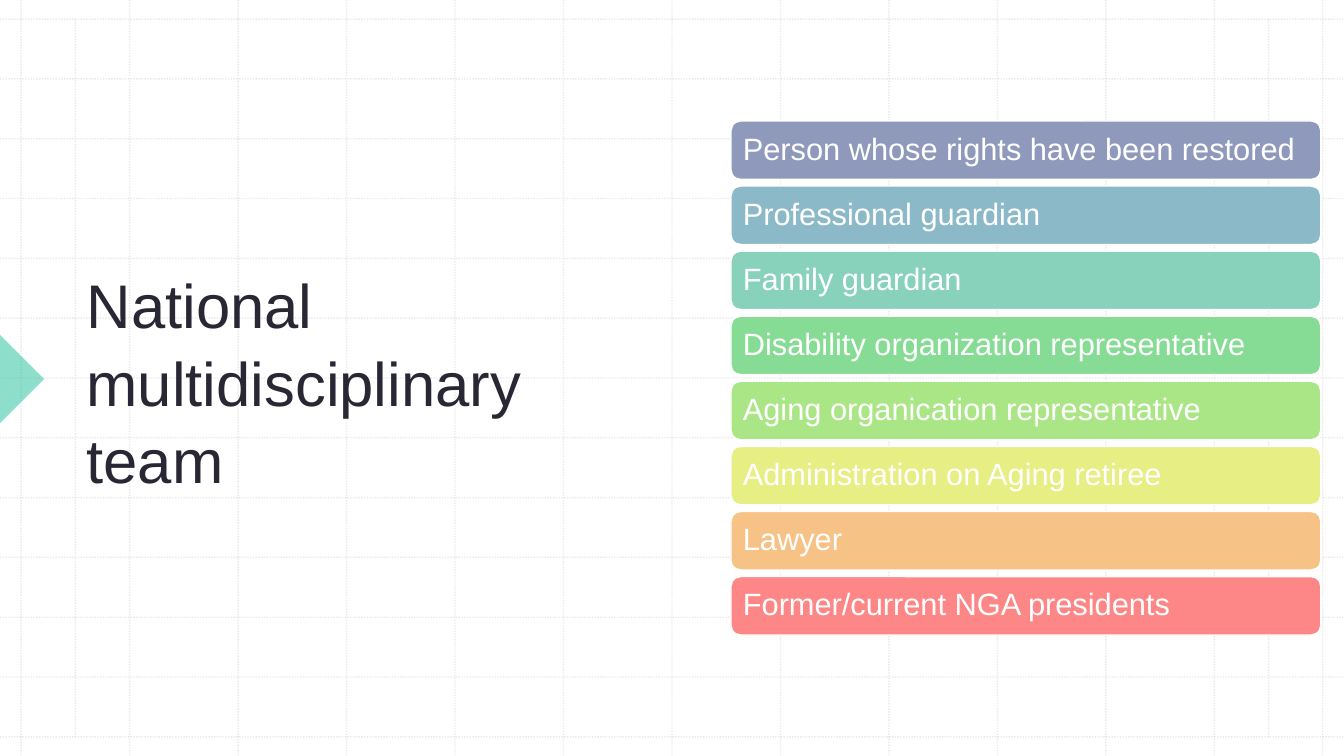
from pptx import Presentation
from pptx.dml.color import RGBColor
from pptx.enum.dml import MSO_LINE
from pptx.enum.shapes import MSO_CONNECTOR, MSO_SHAPE
from pptx.enum.text import MSO_ANCHOR, PP_ALIGN
from pptx.oxml.ns import qn
from pptx.util import Inches, Pt
from lxml.etree import SubElement

HUES = {"grid": "BCBCBC", "mark": "1EBE9B", "ink": "2A2735", "white": "FFFFFF"}
WIDE, HIGH = 13.33, 7.5

deck = Presentation()
deck.slide_width, deck.slide_height = Inches(WIDE), Inches(HIGH)
slide = deck.slides.add_slide(deck.slide_layouts[6])
shapes = slide.shapes


def fade(fill, share):
    """Set the opacity of a solid fill element, in percent."""
    color = fill.find(".//" + qn("a:srgbClr"))
    SubElement(color, qn("a:alpha")).set("val", str(share * 1000))


def write(shape, text, size, hue, space):
    """Put one left-aligned, vertically centred paragraph in a shape."""
    frame = shape.text_frame
    frame.text = text
    frame.word_wrap = True
    frame.vertical_anchor = MSO_ANCHOR.MIDDLE
    para = frame.paragraphs[0]
    para.alignment = PP_ALIGN.LEFT
    para.line_spacing = space
    font = para.runs[0].font
    font.name, font.size = "Arial", Pt(size)
    font.color.rgb = RGBColor.from_string(hue)


# Dotted background grid: 12 columns and 12 rows, plus two inner margins
left, right, top, base = 0.21, 13.12, 0.19, 7.31
col, row = (right - left) / 12, (base - top) / 12
lines = [(left + i * col, 0, left + i * col, HIGH) for i in range(13)]
lines += [(0, top + i * row, WIDE, top + i * row) for i in range(13)]
lines += [(x, top, x, base) for x in (left + col / 2, right - col / 2)]
for ends in lines:
    rule = shapes.add_connector(MSO_CONNECTOR.STRAIGHT, *map(Inches, ends))
    rule.line.width = Pt(1)
    rule.line.dash_style = MSO_LINE.ROUND_DOT
    rule.line.color.rgb = RGBColor.from_string(HUES["grid"])
    props = rule._element.spPr
    fade(props, 30)
    SubElement(props, qn("a:effectLst"))

# Pointer at the left edge
side = 0.62
mark = shapes.add_shape(MSO_SHAPE.RIGHT_TRIANGLE, Inches(-side / 2), Inches(3.45),
                        Inches(side), Inches(side))
mark.rotation = 225
mark.shadow.inherit = False
mark.fill.solid()
mark.fill.fore_color.rgb = RGBColor.from_string(HUES["mark"])
mark.line.fill.background()
fade(mark._element.spPr, 50)

# Title
title = shapes.add_textbox(Inches(0.76), Inches(0.79), Inches(5.92), Inches(5.95))
write(title, "National multidisciplinary team", 44, HUES["ink"], 1.05)

# Team members, one bar each
team = [
    ("Person whose rights have been restored", "8F99BB"),
    ("Professional guardian", "8BB9C7"),
    ("Family guardian", "88D2BC"),
    ("Disability organization representative", "86DC94"),
    ("Aging organication representative", "AAE685"),
    ("Administration on Aging retiree", "E6EE84"),
    ("Lawyer", "F6C285"),
    ("Former/current NGA presidents", "FD8686"),
]
first, last = 1.2, 5.72
step = (last - first) / (len(team) - 1)
for i, (role, hue) in enumerate(team):
    bar = shapes.add_shape(MSO_SHAPE.ROUNDED_RECTANGLE, Inches(7.25),
                           Inches(first + i * step), Inches(5.85), Inches(0.58))
    bar.shadow.inherit = False
    bar.fill.solid()
    bar.fill.fore_color.rgb = RGBColor.from_string(hue)
    bar.line.color.rgb = RGBColor.from_string(HUES["white"])
    bar.line.width = Pt(1)
    frame = bar.text_frame
    frame.margin_left = frame.margin_right = Inches(0.09)
    write(bar, role, 22, HUES["white"], 0.9)

deck.save("out.pptx")
